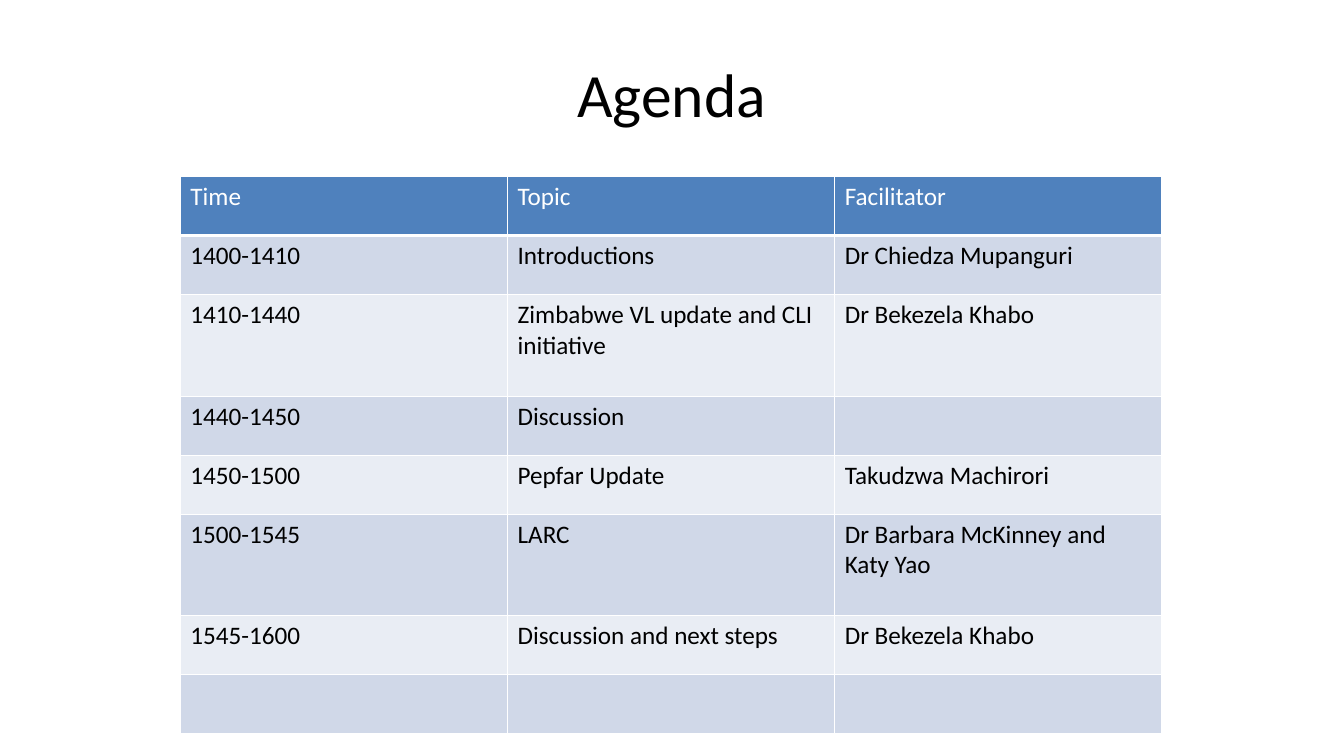
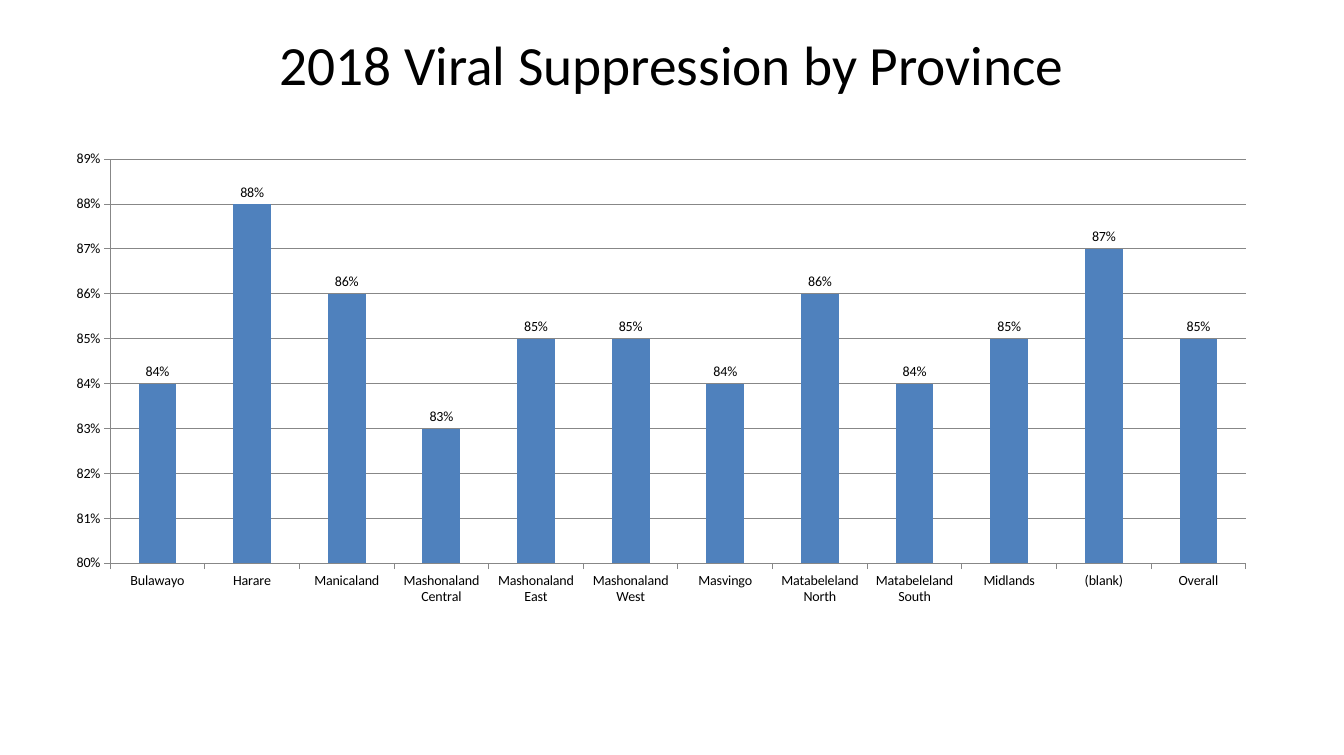
"""Build a two-slide deck: a meeting agenda table and a viral suppression chart."""
import pptx
import pptx.chart.data
import pptx.dml.color
import pptx.enum.chart
import pptx.enum.text
import pptx.oxml
import pptx.oxml.ns
import pptx.util

Pt = pptx.util.Pt
HUES = {"text": "000000", "white": "FFFFFF", "blue": "4F81BD",
        "dark": "D0D8E8", "light": "E9EDF4", "grid": "878787"}
HUES_RGB = {name: pptx.dml.color.RGBColor.from_string(hue) for name, hue in HUES.items()}
ANCHOR = pptx.enum.text.MSO_ANCHOR


def format(item, values, hue=None):
    for name, value in values.items():
        setattr(item, name, value)
    if hue:
        item.color.rgb = HUES_RGB[hue]


def add_slide(text, size, frame):
    slide = deck.slides.add_slide(deck.slide_layouts[5])
    title = slide.shapes.title
    format(title, {"left": Pt(48), "top": Pt(21.6), "width": Pt(865), "height": Pt(90)})
    title.text = text
    format(title.text_frame, {"word_wrap": True,
                              "auto_size": pptx.enum.text.MSO_AUTO_SIZE.NONE, **frame})
    line = title.text_frame.paragraphs[0]
    line.alignment = pptx.enum.text.PP_ALIGN.CENTER
    format(line.runs[0].font, {"name": "Calibri", "size": Pt(size)}, "text")
    return slide


deck = pptx.Presentation()
format(deck, {"slide_width": Pt(961.2), "slide_height": Pt(540)})

ROWS = [
    ("Time", "Topic", "Facilitator"),
    ("1400-1410", "Introductions", "Dr Chiedza Mupanguri"),
    ("1410-1440", "Zimbabwe VL update and CLI initiative", "Dr Bekezela Khabo"),
    ("1440-1450", "Discussion", ""),
    ("1450-1500", "Pepfar Update", "Takudzwa Machirori"),
    ("1500-1545", "LARC", "Dr Barbara McKinney and Katy Yao"),
    ("1545-1600", "Discussion and next steps", "Dr Bekezela Khabo"),
    ("", "", ""),
]
TALL = (2, 5)

slide = add_slide("Agenda", 44, {"vertical_anchor": ANCHOR.MIDDLE})
table = slide.shapes.add_table(len(ROWS), 3, Pt(129), Pt(126.2), Pt(702), Pt(398.8)).table
for r, row in enumerate(ROWS):
    table.rows[r].height = Pt(72.8 if r in TALL else 42.2)
    band = "blue" if r == 0 else "dark" if r % 2 else "light"
    for c, text in enumerate(row):
        cell = table.cell(r, c)
        props = cell._tc.get_or_add_tcPr()
        for side in "LRTB":
            width = Pt(3 if r == 0 and side == "B" else 1)
            props.append(pptx.oxml.parse_xml(
                f'<a:ln{side} {pptx.oxml.ns.nsdecls("a")} w="{width}"><a:solidFill>'
                f'<a:srgbClr val="{HUES["white"]}"/></a:solidFill></a:ln{side}>'))
        cell.fill.solid()
        cell.fill.fore_color.rgb = HUES_RGB[band]
        cell.text = text
        format(cell.text_frame.paragraphs[0].font,
               {"name": "Calibri", "size": Pt(18), "bold": False},
               "text" if r else "white")

RATES = {
    "Bulawayo": 0.84, "Harare": 0.88, "Manicaland": 0.86,
    "Mashonaland Central": 0.83, "Mashonaland East": 0.85,
    "Mashonaland West": 0.85, "Masvingo": 0.84, "Matabeleland North": 0.86,
    "Matabeleland South": 0.84, "Midlands": 0.85, "(blank)": 0.87, "Overall": 0.85,
}

slide = add_slide("2018 Viral Suppression by Province", 39.6,
                  {"vertical_anchor": ANCHOR.TOP, "margin_top": 0})
data = pptx.chart.data.CategoryChartData(number_format="0%")
data.categories = list(RATES)
data.add_series("Series 1", list(RATES.values()))
chart = slide.shapes.add_chart(
    pptx.enum.chart.XL_CHART_TYPE.COLUMN_CLUSTERED,
    Pt(37.4), Pt(101.5), Pt(871), Pt(337.7), data).chart
format(chart, {"has_legend": False, "has_title": False})
format(chart.font, {"name": "Calibri", "size": Pt(10)}, "text")

plot = chart.plots[0]
format(plot, {"gap_width": 150, "vary_by_categories": False, "has_data_labels": True})
format(plot.data_labels, {
    "show_value": True, "number_format": "0%", "number_format_is_linked": False,
    "position": pptx.enum.chart.XL_LABEL_POSITION.OUTSIDE_END})
bars = plot.series[0].format.fill
bars.solid()
bars.fore_color.rgb = HUES_RGB["blue"]

rates = chart.value_axis
format(rates, {"minimum_scale": 0.8, "maximum_scale": 0.89, "major_unit": 0.01,
               "has_major_gridlines": True})
format(rates.tick_labels, {"number_format": "0%", "number_format_is_linked": False})
for axis in (rates, chart.category_axis):
    format(axis, {"major_tick_mark": pptx.enum.chart.XL_TICK_MARK.OUTSIDE,
                  "minor_tick_mark": pptx.enum.chart.XL_TICK_MARK.NONE})
for part in (rates, chart.category_axis, rates.major_gridlines):
    format(part.format.line, {"width": Pt(0.75)}, "grid")

deck.save("out.pptx")
